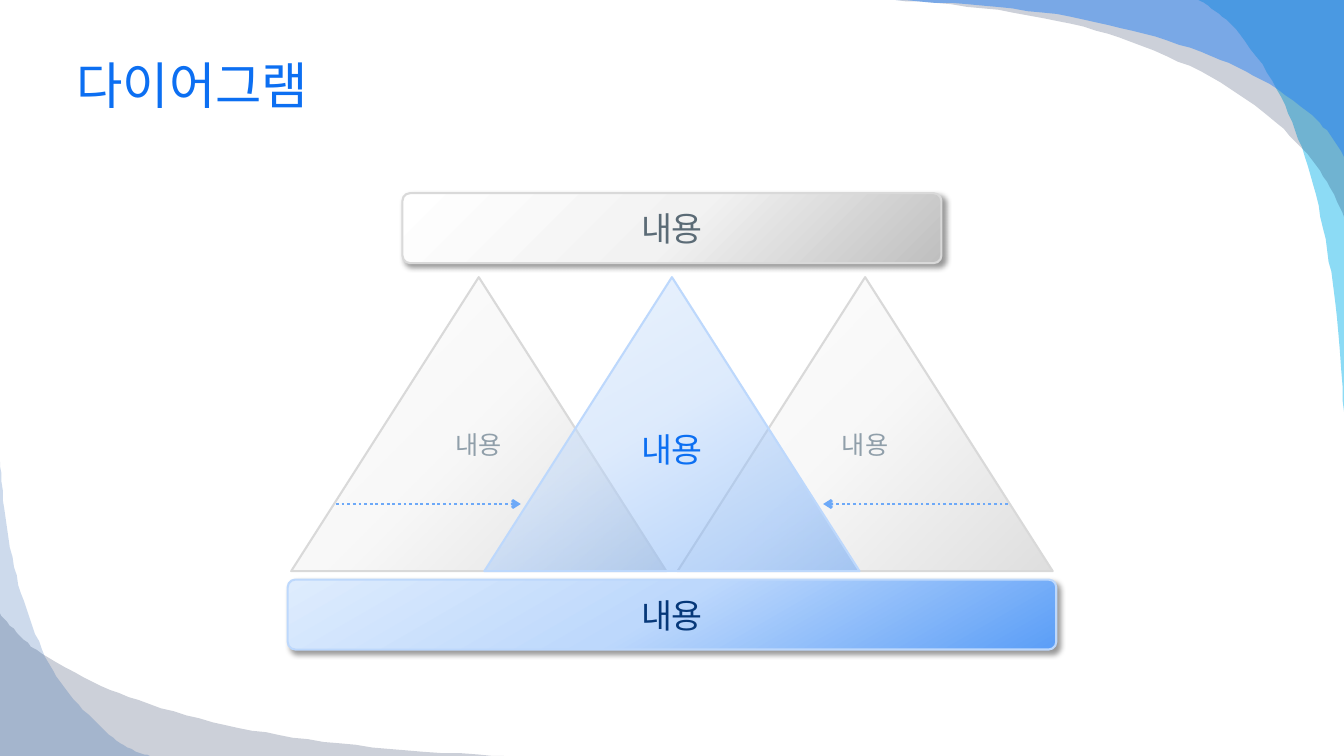
from lxml import etree
from pptx import Presentation
from pptx.dml.color import RGBColor
from pptx.enum.dml import MSO_LINE
from pptx.enum.shapes import MSO_CONNECTOR, MSO_SHAPE
from pptx.enum.text import MSO_ANCHOR, PP_ALIGN
from pptx.oxml.ns import qn
from pptx.util import Pt

STRAIGHT = MSO_CONNECTOR.STRAIGHT
BAR, TRIANGLE = MSO_SHAPE.ROUNDED_RECTANGLE, MSO_SHAPE.ISOSCELES_TRIANGLE
TOP, MIDDLE, CENTER = MSO_ANCHOR.TOP, MSO_ANCHOR.MIDDLE, PP_ALIGN.CENTER
DOTTED = MSO_LINE.ROUND_DOT

FONT = "Karla"
SLIDE_W, SLIDE_H = 960, 540
COLORS = {
    "title": "0C6FF2", "slate": "5B6B76", "mist": "909FAA", "navy": "063879",
    "grey_line": "D9D9D9", "blue_line": "BDD8FC", "arrow": "6DA9F8",
    "cyan": "00B1E9", "ink": "021741", "azure": "247FF4", "cobalt": "084AA1",
    "shadow": "000000",
}
# Gradient angle in degrees, then (position in percent, colour)
GREY = (45, [(0, "FFFFFF"), (51, "F2F2F2"), (100, "BFBFBF")])
BLUE = (60, [(0, "DEECFD"), (48, "BDD8FC"), (100, "5B9EF7")])

# Slide corner, colour, opacity in percent, points along the curved edge
SWOOSHES = [
    ((SLIDE_W, 0), "cyan", 45,
     [(856, 0), (871, 10), (886, 25), (909, 58), (925, 93), (938, 132),
      (948, 179), (955, 227), (960, 294)]),
    ((SLIDE_W, 0), "ink", 20,
     [(960, 155), (948, 130), (930, 106), (901, 79), (865, 55), (816, 33),
      (765, 17), (702, 6), (640, 0)]),
    ((SLIDE_W, 0), "azure", 49,
     [(960, 112), (950, 96), (933, 79), (901, 57), (865, 40), (817, 24),
      (765, 12), (702, 4), (640, 0)]),
    ((0, SLIDE_H), "ink", 20,
     [(0, 438), (12, 452), (30, 467), (66, 487), (107, 503), (161, 518),
      (220, 528), (290, 536), (360, 540)]),
    ((0, SLIDE_H), "cobalt", 20,
     [(107, 540), (91, 534), (75, 522), (52, 499), (35, 474), (21, 441),
      (10, 405), (3, 363), (0, 330)]),
]


def rgb(name):
    return RGBColor.from_string(COLORS[name])


def sub(parent, tag, **attributes):
    return etree.SubElement(parent, qn(tag),
                            {key: str(value) for key, value in attributes.items()})


def add_color(parent, hex_value, opacity):
    color = sub(parent, "a:srgbClr", val=hex_value)
    if opacity < 100:
        sub(color, "a:alpha", val=opacity * 1000)


def set_gradient(shape, gradient, opacity):
    angle, stops = gradient
    shape.fill.gradient()
    grad = shape._element.spPr.find(qn("a:gradFill"))
    for child in list(grad):
        grad.remove(child)
    stop_list = sub(grad, "a:gsLst")
    for position, hex_value in stops:
        add_color(sub(stop_list, "a:gs", pos=position * 1000), hex_value, opacity)
    sub(grad, "a:lin", ang=angle * 60000, scaled=0)


def write(frame, text, size, color, anchor, align=None):
    frame.word_wrap = True
    frame.vertical_anchor = anchor
    paragraph = frame.paragraphs[0]
    paragraph.alignment = align
    run = paragraph.add_run()
    run.text = text
    run.font.size = Pt(size)
    run.font.name = FONT
    run.font.color.rgb = rgb(color)


def smooth(points, steps=6):
    """Return a Catmull-Rom curve through the points."""
    padded = [points[0], *points, points[-1]]
    curve = [points[0]]
    for a, b, c, d in zip(padded, padded[1:], padded[2:], padded[3:]):
        for step in range(1, steps + 1):
            t = step / steps
            curve.append(tuple(
                round(q + (r - p) * t / 2 + (2 * p - 5 * q + 4 * r - s) * t ** 2 / 2
                      + (3 * q - p - 3 * r + s) * t ** 3 / 2, 2)
                for p, q, r, s in zip(a, b, c, d)))
    return curve


def add_swoosh(slide, corner, color, opacity, edge):
    builder = slide.shapes.build_freeform(*corner, scale=Pt(1))
    builder.add_line_segments(smooth(edge), close=True)
    swoosh = builder.convert_to_shape()
    swoosh.shadow.inherit = False
    swoosh.line.fill.background()
    swoosh.fill.solid()
    swoosh.fill.fore_color.rgb = rgb(color)
    sub(swoosh._element.spPr.find(qn("a:solidFill"))[0], "a:alpha", val=opacity * 1000)


def add_title(slide, box, text):
    title = slide.shapes.add_textbox(*map(Pt, box))
    write(title.text_frame, text, 36, "title", MIDDLE)


def add_panel(slide, kind, box, gradient, line, opacity=100):
    panel = slide.shapes.add_shape(kind, *map(Pt, box))
    panel.shadow.inherit = False
    set_gradient(panel, gradient, opacity)
    panel.line.color.rgb = rgb(line)
    panel.line.width = Pt(1.5)
    return panel


def add_bar(slide, box, text, gradient, line, color):
    bar = add_panel(slide, BAR, box, gradient, line)
    bar.adjustments[0] = 0.11
    effects = bar._element.spPr.find(qn("a:effectLst"))
    shadow = sub(effects, "a:outerShdw", blurRad=Pt(4), dist=Pt(3), dir=45 * 60000,
                 algn="tl", rotWithShape=0)
    add_color(shadow, COLORS["shadow"], 40)
    write(bar.text_frame, text, 24, color, MIDDLE, CENTER)


def add_triangle(slide, box, text, gradient, line, size, color):
    triangle = add_panel(slide, TRIANGLE, box, gradient, line, opacity=50)
    write(triangle.text_frame, text, size, color, TOP, CENTER)


def add_arrow(slide, start, end, y):
    arrow = slide.shapes.add_connector(STRAIGHT, Pt(start), Pt(y), Pt(end), Pt(y))
    arrow.line.color.rgb = rgb("arrow")
    arrow.line.width = Pt(2)
    arrow.line.dash_style = DOTTED
    sub(arrow.line._get_or_add_ln(), "a:tailEnd", type="arrow")
    sub(arrow._element.spPr, "a:effectLst")


def add_diagram(slide, box):
    """Two outer triangles point inward to a middle one, between two bars."""
    left, top, width, height = box
    center = left + width / 2
    bar_h, roof_w = 50, 385
    tri_w, tri_h, tri_step = 268, 210, 138
    tri_top = top + 60
    add_bar(slide, (center - roof_w / 2, top, roof_w, bar_h),
            "내용", GREY, "grey_line", "slate")
    add_bar(slide, (left, top + height - bar_h, width, bar_h),
            "내용", BLUE, "blue_line", "navy")
    for side in (-1, 1):
        tri_left = center + side * tri_step - tri_w / 2
        add_triangle(slide, (tri_left, tri_top, tri_w, tri_h),
                     "내용", GREY, "grey_line", 18, "mist")
        add_arrow(slide, center + side * 240, center + side * 108, tri_top + 162)
    add_triangle(slide, (center - tri_w / 2, tri_top, tri_w, tri_h),
                 "내용", BLUE, "blue_line", 24, "title")


def main():
    deck = Presentation()
    deck.slide_width, deck.slide_height = Pt(SLIDE_W), Pt(SLIDE_H)
    slide = deck.slides.add_slide(deck.slide_layouts[6])
    for swoosh in SWOOSHES:
        add_swoosh(slide, *swoosh)
    add_title(slide, (47.5, 24, 864, 72.5), "다이어그램")
    add_diagram(slide, (205.5, 138, 549, 326))
    deck.save("out.pptx")


if __name__ == "__main__":
    main()
